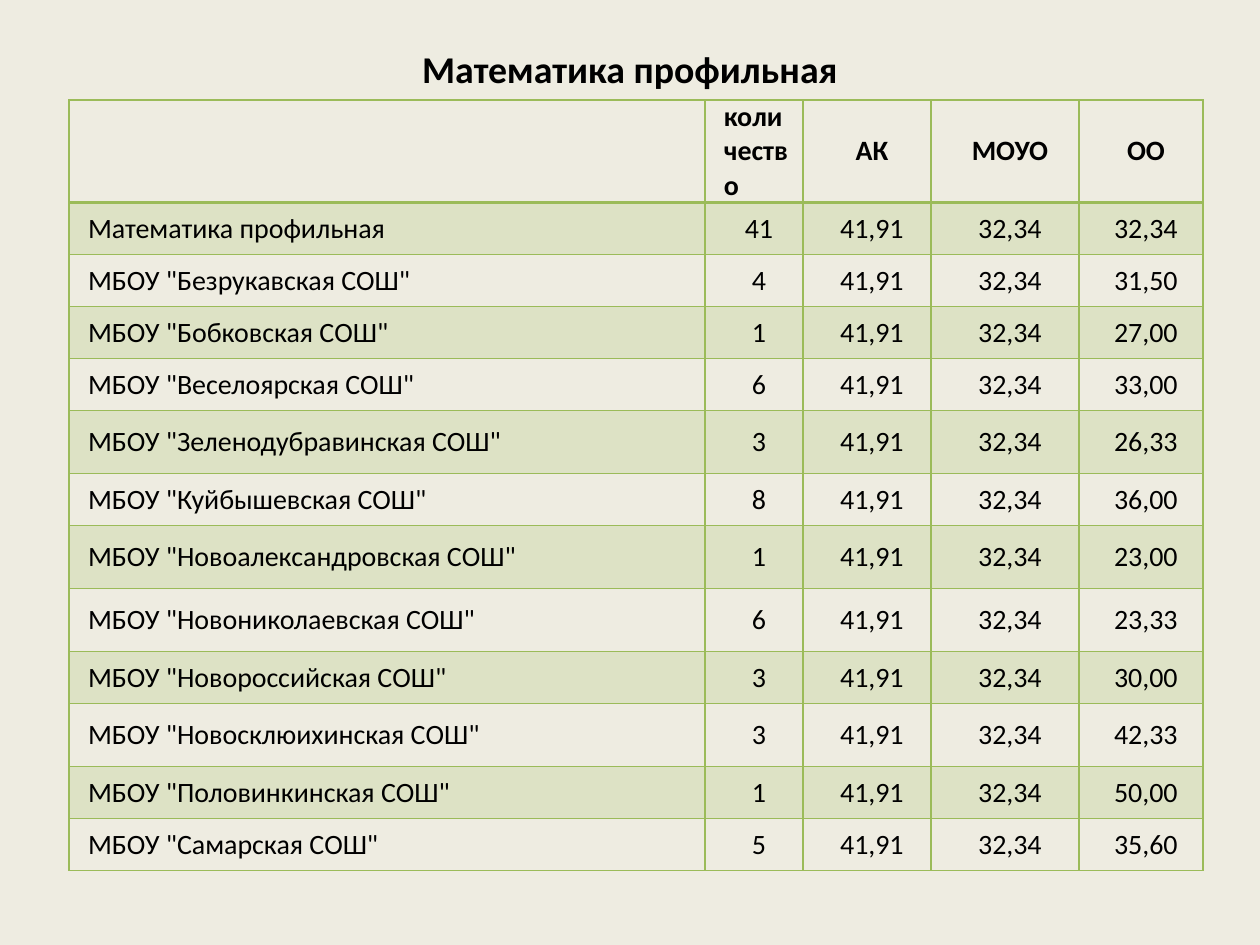
from lxml.etree import SubElement
from pptx import Presentation
from pptx.dml.color import RGBColor
from pptx.enum.text import MSO_ANCHOR as Anchor, PP_ALIGN as Align
from pptx.oxml.ns import qn
from pptx.util import Emu, Pt

SCALE = 914400 / 126  # EMU in one px
FONT = "Calibri"
PAPER, INK, GREEN = "EEECE1", "000000", "9BBB59"

COLUMNS = [636, 98, 128, 148, 124]
HEADER_HEIGHT, ROW_HEIGHT, TALL_ROW_HEIGHT = 79, 52, 63
TALL_ROWS = {5, 7, 8, 10}

REGION_SCORES = ("41,91", "32,34")  # the same АК and МОУО scores in every row
HEADINGS = ["", "количество", "АК", "МОУО", "ОО"]
RESULTS = [
    ("Математика профильная", "41", "32,34"),
    ('МБОУ "Безрукавская СОШ"', "4", "31,50"),
    ('МБОУ "Бобковская СОШ"', "1", "27,00"),
    ('МБОУ "Веселоярская СОШ"', "6", "33,00"),
    ('МБОУ "Зеленодубравинская СОШ"', "3", "26,33"),
    ('МБОУ "Куйбышевская СОШ"', "8", "36,00"),
    ('МБОУ "Новоалександровская СОШ"', "1", "23,00"),
    ('МБОУ "Новониколаевская СОШ"', "6", "23,33"),
    ('МБОУ "Новороссийская СОШ"', "3", "30,00"),
    ('МБОУ "Новосклюихинская СОШ"', "3", "42,33"),
    ('МБОУ "Половинкинская СОШ"', "1", "50,00"),
    ('МБОУ "Самарская СОШ"', "5", "35,60"),
]


def px(length):
    return Emu(round(length * SCALE))


def color(code):
    return RGBColor.from_string(code)


def format_paragraph(para, size, bold, align):
    para.alignment = align
    font = para.font
    font.name, font.size, font.bold = FONT, Pt(size), bold
    font.color.rgb = color(INK)


def add_title(page, text):
    title = page.shapes.title
    title.left, title.top, title.width, title.height = map(px, (63, 38, 1134, 60))
    frame = title.text_frame
    frame.text = text
    frame.vertical_anchor = Anchor.MIDDLE
    format_paragraph(frame.paragraphs[0], 21.6, True, Align.CENTER)


def set_borders(cell, widths):
    properties = cell._tc.get_or_add_tcPr()
    for side in ("L", "R", "T", "B"):
        line = SubElement(properties, qn(f"a:ln{side}"), w=str(Pt(widths.get(side, 1))))
        fill = SubElement(line, qn("a:solidFill"))
        SubElement(fill, qn("a:srgbClr"), val=GREEN)


def set_fill(cell, banded):
    if not banded:
        cell.fill.background()
        return
    cell.fill.solid()
    cell.fill.fore_color.rgb = color(GREEN)
    tint = cell._tc.tcPr.find(qn("a:solidFill")).find(qn("a:srgbClr"))
    SubElement(tint, qn("a:alpha"), val="20000")


def set_text(cell, text, bold, align, anchor):
    cell.margin_left = cell.margin_right = px(9)
    cell.margin_top = cell.margin_bottom = 0
    cell.vertical_anchor = anchor
    cell.text = text
    para = cell.text_frame.paragraphs[0]
    format_paragraph(para, 16, bold, align)
    para._p.get_or_add_pPr().set("marL", str(px(10)))


def add_results_table(page, rows):
    heights = [HEADER_HEIGHT] + [
        TALL_ROW_HEIGHT if r in TALL_ROWS else ROW_HEIGHT for r in range(1, len(rows))
    ]
    table = page.shapes.add_table(
        len(rows), len(COLUMNS), px(69), px(100), px(sum(COLUMNS)), px(sum(heights))
    ).table
    table.first_row = table.horz_banding = False
    for column, width in zip(table.columns, COLUMNS):
        column.width = px(width)
    for row, height in zip(table.rows, heights):
        row.height = px(height)

    # The line under the header is thicker
    thick_sides = {0: {"B": 2}, 1: {"T": 2}}
    for r, values in enumerate(rows):
        for c, text in enumerate(values):
            cell = table.cell(r, c)
            set_borders(cell, thick_sides.get(r, {}))
            set_fill(cell, banded=r % 2 == 1)
            count_heading = (r, c) == (0, 1)
            align = Align.JUSTIFY if c == 0 or count_heading else Align.CENTER
            anchor = Anchor.TOP if count_heading else Anchor.MIDDLE
            set_text(cell, text, r == 0, align, anchor)


def main():
    deck = Presentation()
    deck.slide_width, deck.slide_height = px(1260), px(945)
    page = deck.slides.add_slide(deck.slide_layouts[5])
    page.background.fill.solid()
    page.background.fill.fore_color.rgb = color(PAPER)

    # Heading and results by school
    add_title(page, "Математика профильная")
    rows = [HEADINGS] + [
        (school, count, *REGION_SCORES, score) for school, count, score in RESULTS
    ]
    add_results_table(page, rows)

    deck.save("out.pptx")


if __name__ == "__main__":
    main()
